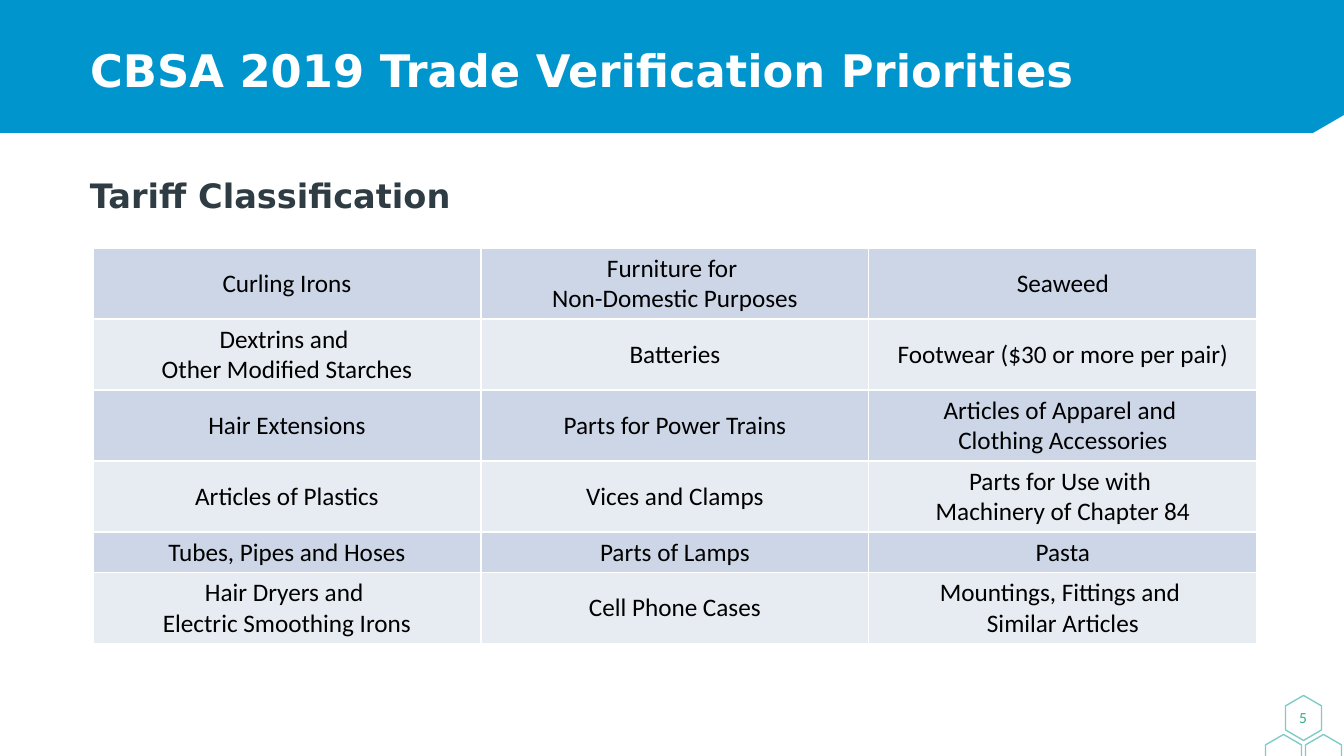
from lxml import etree
from pptx import Presentation
from pptx.dml.color import RGBColor
from pptx.enum.shapes import MSO_SHAPE
from pptx.enum.text import MSO_ANCHOR, MSO_AUTO_SIZE, PP_ALIGN
from pptx.oxml import parse_xml
from pptx.oxml.ns import nsdecls, qn
from pptx.util import Pt

PX = 914400 / 100.8
HEXAGON = MSO_SHAPE.HEXAGON
MIDDLE, TOP = MSO_ANCHOR.MIDDLE, MSO_ANCHOR.TOP
LEFT, CENTER = PP_ALIGN.LEFT, PP_ALIGN.CENTER
NO_AUTOFIT = MSO_AUTO_SIZE.NONE

HEADING_FONT, BODY_FONT = "DejaVu Sans", "Calibri"
WHITE, BLACK = "FFFFFF", "000000"
BAND_BLUE, HEADING_GREY = "0096CD", "2F3C43"
HEXAGON_TEAL, NUMBER_GREEN = "00998D", "2DAF88"
ROW_FILLS = ("CCD6E7", "E7ECF3")

BAND_OUTLINE = [(0, 0), (1344, 0), (1344, 115), (1313, 133), (0, 133)]
HEXAGON_CORNERS = [(1281, 700), (1301, 739), (1261, 739)]
ONE_LINE, TWO_LINES = 40, 71
GOODS = [
    ("Curling Irons", "Furniture for \nNon-Domestic Purposes", "Seaweed"),
    ("Dextrins and \nOther Modified Starches", "Batteries",
     "Footwear ($30 or more per pair)"),
    ("Hair Extensions", "Parts for Power Trains",
     "Articles of Apparel and \nClothing Accessories"),
    ("Articles of Plastics", "Vices and Clamps",
     "Parts for Use with \nMachinery of Chapter 84"),
    ("Tubes, Pipes and Hoses", "Parts of Lamps", "Pasta"),
    ("Hair Dryers and \nElectric Smoothing Irons", "Cell Phone Cases",
     "Mountings, Fittings and \nSimilar Articles"),
]


def px(length):
    return round(length * PX)


def rgb(colour):
    return RGBColor.from_string(colour)


class PrioritiesSlide:
    def __init__(self, deck):
        self.slide = deck.slides.add_slide(deck.slide_layouts[5])
        self.shapes = self.slide.shapes

    def set_text(self, frame, text, size, colour, font=BODY_FONT, bold=False, align=LEFT):
        paragraph = frame.paragraphs[0]
        paragraph.text = text
        paragraph.alignment = align
        for run in paragraph.runs:
            run.font.name = font
            run.font.size = Pt(size)
            run.font.bold = bold
            run.font.color.rgb = rgb(colour)
        return paragraph

    def band(self, outline, colour):
        """Draw the header band behind everything else."""
        builder = self.shapes.build_freeform(*map(px, outline[0]))
        builder.add_line_segments([(px(x), px(y)) for x, y in outline[1:]], close=True)
        band = builder.convert_to_shape()
        band.shadow.inherit = False
        band.fill.solid()
        band.fill.fore_color.rgb = rgb(colour)
        band.line.fill.background()
        self.shapes._spTree.insert(2, band._element)

    def hexagon(self, left, top):
        hexagon = self.shapes.add_shape(HEXAGON, px(left), px(top), px(45), px(36))
        hexagon.rotation = 90
        hexagon.adjustments[0] = 0.29
        hexagon.shadow.inherit = False
        hexagon.fill.background()
        hexagon.line.width = Pt(1)
        hexagon.line.color.rgb = rgb(HEXAGON_TEAL)
        colour = hexagon._element.spPr.find(".//" + qn("a:srgbClr"))
        etree.SubElement(colour, qn("a:alpha"), val="50000")

    def title(self, text, left, top, width, height):
        title = self.shapes.title
        title.left, title.top = px(left), px(top)
        title.width, title.height = px(width), px(height)
        frame = title.text_frame
        frame.word_wrap = True
        frame.auto_size = NO_AUTOFIT
        frame.vertical_anchor = MIDDLE
        paragraph = self.set_text(frame, text, 32, WHITE, HEADING_FONT, bold=True)
        paragraph.line_spacing = 0.9

    def text(self, text, left, top, width, height, size, colour, anchor=TOP, **style):
        box = self.shapes.add_textbox(px(left), px(top), px(width), px(height))
        frame = box.text_frame
        frame.word_wrap = True
        frame.vertical_anchor = anchor
        self.set_text(frame, text, size, colour, **style)

    def border(self, cell):
        properties = cell._tc.get_or_add_tcPr()
        for side in ("lnL", "lnR", "lnT", "lnB"):
            properties.append(parse_xml(
                f'<a:{side} {nsdecls("a")} w="12700"><a:solidFill>'
                f'<a:srgbClr val="{WHITE}"/></a:solidFill></a:{side}>'))

    def table(self, rows, left, top, column_width):
        heights = [TWO_LINES if any("\n" in goods for goods in row) else ONE_LINE
                   for row in rows]
        columns = len(rows[0])
        table = self.shapes.add_table(
            len(rows), columns, px(left), px(top),
            px(column_width * columns), px(sum(heights))).table
        table.first_row = False
        for column in table.columns:
            column.width = px(column_width)
        for r, row in enumerate(rows):
            table.rows[r].height = px(heights[r])
            for c, goods in enumerate(row):
                cell = table.cell(r, c)
                self.border(cell)
                cell.fill.solid()
                cell.fill.fore_color.rgb = rgb(ROW_FILLS[r % 2])
                cell.vertical_anchor = MIDDLE
                self.set_text(cell.text_frame, goods, 18, BLACK, align=CENTER)


def main():
    deck = Presentation()
    deck.slide_width, deck.slide_height = px(1344), px(756)
    page = PrioritiesSlide(deck)
    page.band(BAND_OUTLINE, BAND_BLUE)
    for corner in HEXAGON_CORNERS:
        page.hexagon(*corner)
    page.title("CBSA 2019 Trade Verification Priorities", 80, 19, 1185, 108)
    page.text("5", 1283, 701, 40, 33, 11, NUMBER_GREEN, MIDDLE, align=CENTER)
    page.text("Tariff Classification", 80, 170, 1185, 50, 24, HEADING_GREY,
              font=HEADING_FONT, bold=True)
    page.table(GOODS, 93, 248, 388)
    deck.save("out.pptx")


if __name__ == "__main__":
    main()
